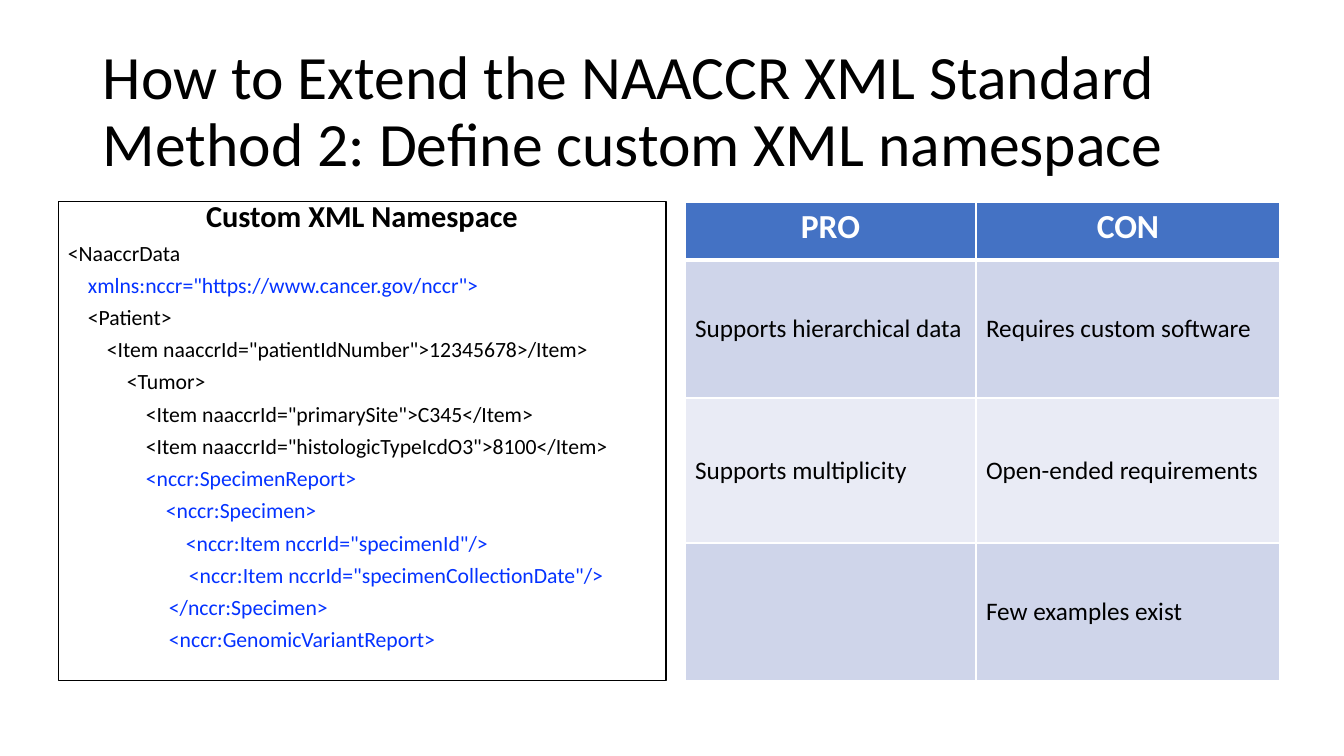
from lxml import etree
from pptx import Presentation
from pptx import util as u
from pptx.dml.color import RGBColor
from pptx.enum import shapes, text
from pptx.oxml.ns import qn

PX = 914400 / 100.8
FONT = "Calibri"
COLORS = {"black": "000000", "white": "FFFFFF", "code": "0432FF",
          "header": "4472C4", "odd": "CFD5EA", "even": "E9EBF5"}


def px(*lengths):
    return [u.Emu(round(length * PX)) for length in lengths]


def write(para, words, size, color="black", bold=False):
    span = para.add_run()
    span.text = words
    span.font.name = FONT
    span.font.size = u.Pt(size)
    span.font.bold = bold
    span.font.color.rgb = RGBColor.from_string(COLORS[color])


deck = Presentation()
deck.slide_width, deck.slide_height = px(1344, 756)
page = deck.slides.add_slide(deck.slide_layouts[6])

# Title
title = page.shapes.add_textbox(*px(93, 40, 1159, 146)).text_frame
title.word_wrap = True
title.vertical_anchor = text.MSO_ANCHOR.MIDDLE
title.paragraphs[0].line_spacing = 0.9
write(title.paragraphs[0],
      "How to Extend the NAACCR XML Standard Method 2: Define custom XML namespace", 44)

# Pros and cons table
rows = [("PRO", "CON"),
        ("Supports hierarchical data", "Requires custom software"),
        ("Supports multiplicity", "Open-ended requirements"),
        ("", "Few examples exist")]
table = page.shapes.add_table(4, 2, *px(685, 202, 595, 479)).table
for column, width in zip(table.columns, px(291, 304)):
    column.width = width
for row, height in zip(table.rows, px(58, 138, 145, 138)):
    row.height = height
for r, words in enumerate(rows):
    for c, label in enumerate(words):
        cell = table.cell(r, c)
        para = cell.text_frame.paragraphs[0]
        if r == 0:
            para.alignment = text.PP_ALIGN.CENTER
            write(para, label, 24, "white", True)
        else:
            cell.vertical_anchor = text.MSO_ANCHOR.MIDDLE
            if label:
                write(para, label, 18)

        # White borders, heavier beside the header's lower edge
        props = cell._tc.get_or_add_tcPr()
        for side in "LRTB":
            heavy = (r, side) in [(0, "B"), (1, "T")]
            line = etree.SubElement(props, qn(f"a:ln{side}"), w=str(u.Pt(3 if heavy else 1)))
            paint = etree.SubElement(line, qn("a:solidFill"))
            etree.SubElement(paint, qn("a:srgbClr"), val=COLORS["white"])
        cell.fill.solid()
        band = "header" if r == 0 else "odd" if r % 2 else "even"
        cell.fill.fore_color.rgb = RGBColor.from_string(COLORS[band])

# Code panel: left indent in px, colour, code
code_lines = [
    (0, "black", "<NaaccrData"),
    (20, "code", 'xmlns:nccr="https://www.cancer.gov/nccr">'),
    (20, "black", "<Patient>"),
    (39, "black", '<Item naaccrId="patientIdNumber">12345678>/Item>'),
    (59, "black", "<Tumor>"),
    (78, "black", '<Item naaccrId="primarySite">C345</Item>'),
    (78, "black", '<Item naaccrId="histologicTypeIcdO3">8100</Item>'),
    (78, "code", "<nccr:SpecimenReport>"),
    (98, "code", "<nccr:Specimen>"),
    (118, "code", '<nccr:Item nccrId="specimenId"/>'),
    (121, "code", '<nccr:Item nccrId="specimenCollectionDate"/>'),
    (101, "code", "</nccr:Specimen>"),
    (101, "code", "<nccr:GenomicVariantReport>"),
]
panel = page.shapes.add_shape(shapes.MSO_SHAPE.RECTANGLE, *px(58, 202, 608, 479))
panel.shadow.inherit = False
panel.fill.background()
panel.line.color.rgb = RGBColor.from_string(COLORS["black"])
panel.line.width = u.Pt(0.75)
frame = panel.text_frame
frame.word_wrap = True
frame.vertical_anchor = text.MSO_ANCHOR.TOP
heading = frame.paragraphs[0]
heading.alignment = text.PP_ALIGN.CENTER
write(heading, "Custom XML Namespace", 21.7, bold=True)
for indent, color, code in code_lines:
    para = frame.add_paragraph()
    para.alignment = text.PP_ALIGN.LEFT
    para._p.get_or_add_pPr().set("marL", str(px(indent)[0]))
    write(para, code, 15.5, color)
for para in frame.paragraphs:
    para.line_spacing = 0.7
    para.space_before = u.Pt(10)

deck.save("out.pptx")
